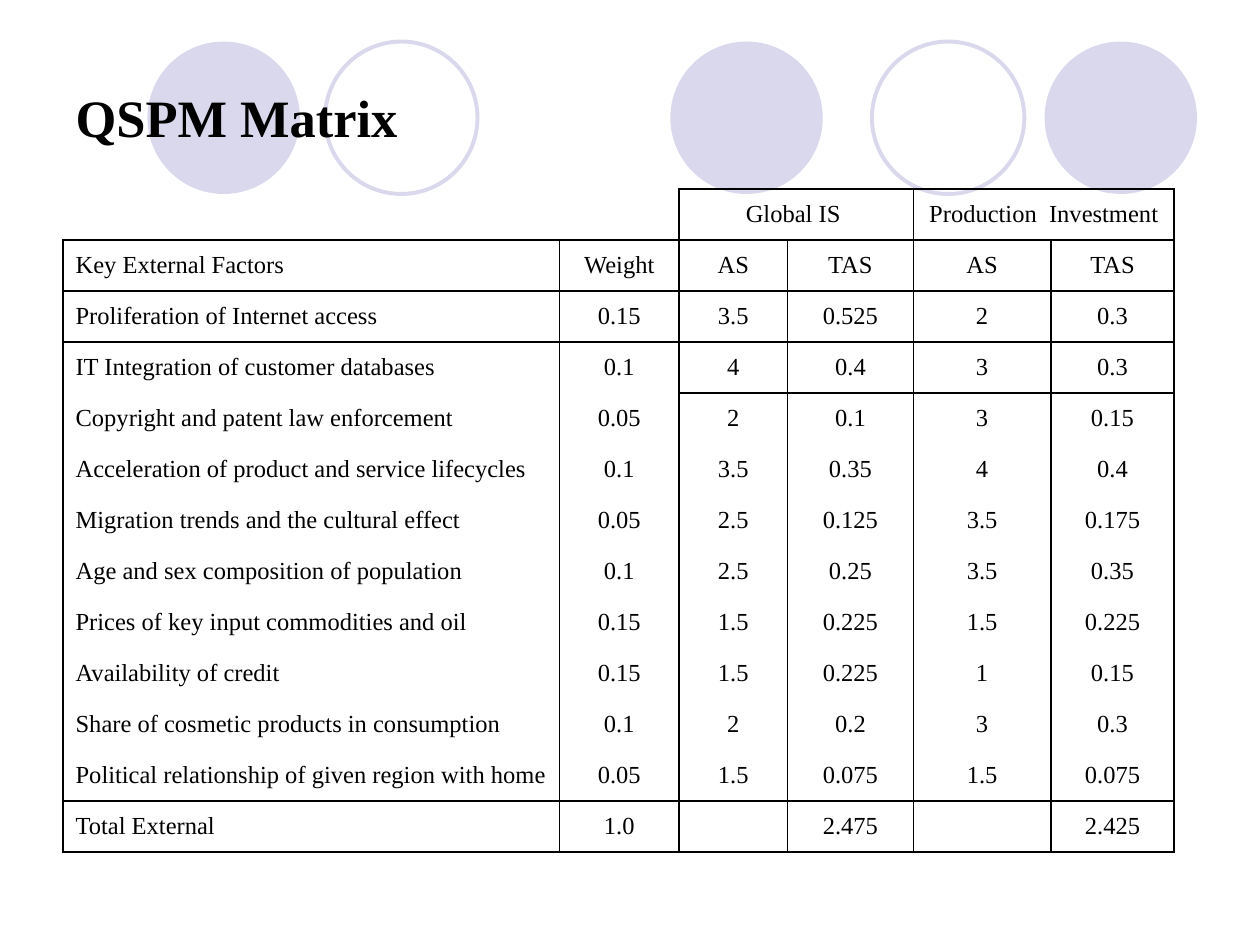
import pptx
import pptx.util
import pptx.dml.color
import pptx.enum.shapes
import pptx.enum.text
import pptx.oxml.ns
import lxml.etree
from dataclasses import dataclass

Pt = pptx.util.Pt
ALIGN = pptx.enum.text.PP_ALIGN
MIDDLE = pptx.enum.text.MSO_ANCHOR.MIDDLE


@dataclass
class Theme:
    font: str = "Times New Roman"
    ink: str = "000000"
    tint: str = "D9D8EC"
    head: float = 30
    body: float = 14
    rule: float = 1
    ring: float = 2.25
    plain: str = "{2D5ABB26-0587-4C30-8999-92F81FD0307C}"


class Page:
    COLS, ROWS = 100, 75

    def __init__(self, deck, theme):
        self.theme = theme
        self.unit_x = deck.slide_width / self.COLS
        self.unit_y = deck.slide_height / self.ROWS
        self.slide = deck.slides.add_slide(deck.slide_layouts[5])

    def box(self, x, y, w, h):
        return (round(x * self.unit_x), round(y * self.unit_y),
                round(w * self.unit_x), round(h * self.unit_y))

    def color(self, code):
        return pptx.dml.color.RGBColor.from_string(code)

    def style(self, frame, size, bold=False, align=ALIGN.LEFT):
        for para in frame.paragraphs:
            para.alignment = align
            for run in para.runs:
                run.font.name = self.theme.font
                run.font.size = Pt(size)
                run.font.bold = bold
                run.font.color.rgb = self.color(self.theme.ink)

    def disc(self, x, y, size, solid):
        kind = pptx.enum.shapes.MSO_SHAPE.OVAL
        disc = self.slide.shapes.add_shape(kind, *self.box(x, y, size, size))
        disc.shadow.inherit = False
        tint = self.color(self.theme.tint)
        if solid:
            disc.fill.solid()
            disc.fill.fore_color.rgb = tint
            disc.line.fill.background()
        else:
            disc.fill.background()
            disc.line.color.rgb = tint
            disc.line.width = Pt(self.theme.ring)

    def title(self, text, x, y, w, h):
        title = self.slide.shapes.title
        title.left, title.top, title.width, title.height = self.box(x, y, w, h)
        title.text_frame.text = text
        title.text_frame.vertical_anchor = MIDDLE
        self.style(title.text_frame, self.theme.head, bold=True)
        self.slide.shapes._spTree.append(title._element)

    def edge(self, cell, sides):
        props = cell._tc.get_or_add_tcPr()
        name = pptx.oxml.ns.qn
        for side in "LRTB":
            if side in sides:
                line = lxml.etree.SubElement(props, name("a:ln" + side),
                                             w=str(int(Pt(self.theme.rule))))
                fill = lxml.etree.SubElement(line, name("a:solidFill"))
                lxml.etree.SubElement(fill, name("a:srgbClr"), val=self.theme.ink)
        cell.fill.background()

    def table(self, data, widths, x, y, high, spans, rule):
        frame = self.slide.shapes.add_table(
            len(data), len(widths), *self.box(x, y, sum(widths), high * len(data)))
        table = frame.table
        table.first_row = table.horz_banding = False
        table._tbl.tblPr.find(pptx.oxml.ns.qn("a:tableStyleId")).text = self.theme.plain
        for col, width in zip(table.columns, widths):
            col.width = round(width * self.unit_x)
        for row in table.rows:
            row.height = round(high * self.unit_y)
        for r, row in enumerate(data):
            for c, text in enumerate(row):
                cell = table.cell(r, c)
                cell.margin_top = cell.margin_bottom = Pt(1.5)
                cell.vertical_anchor = MIDDLE
                self.edge(cell, rule(r, c))
                if text:
                    cell.text_frame.text = text
                    self.style(cell.text_frame, self.theme.body,
                               align=ALIGN.CENTER if c else ALIGN.LEFT)
        for r, c, last in spans:
            table.cell(r, c).merge(table.cell(r, last))


DISCS = [(53.2, True), (82.9, True), (11.7, True), (69.2, False), (25.8, False)]
WIDTHS = [39.4, 9.5, 8.6, 10, 10.9, 9.8]
MATRIX = [
    ["", "", "Global IS ", "", "Production  Investment", ""],
    ["Key External Factors", "Weight", "AS", "TAS", "AS", "TAS"],
    ["Proliferation of Internet access", "0.15", "3.5", "0.525", "2", "0.3"],
    ["IT Integration of customer databases", "0.1", "4", "0.4", "3", "0.3"],
    ["Copyright and patent law enforcement", "0.05", "2", "0.1", "3", "0.15"],
    ["Acceleration of product and service lifecycles", "0.1", "3.5", "0.35", "4", "0.4"],
    ["Migration trends and the cultural effect", "0.05", "2.5", "0.125", "3.5", "0.175"],
    ["Age and sex composition of population", "0.1", "2.5", "0.25", "3.5", "0.35"],
    ["Prices of key input commodities and oil", "0.15", "1.5", "0.225", "1.5", "0.225"],
    ["Availability of credit", "0.15", "1.5", "0.225", "1", "0.15"],
    ["Share of cosmetic products in consumption", "0.1", "2", "0.2", "3", "0.3"],
    ["Political relationship of given region with home", "0.05", "1.5", "0.075", "1.5", "0.075"],
    ["Total External", "1.0", "", "2.475", "", "2.425"],
]


def rule(row, col):
    if row == 0 and col < 2:
        return "B" if col == 0 else "RB"
    if row in (0, 1, len(MATRIX) - 1):
        return "LRTB"
    sides = "LR"
    if row == 2:
        sides += "T" if col < 2 else "TB"
    if row == 3 and col > 1:
        sides += "T"
    if row == len(MATRIX) - 2:
        sides += "B"
    return sides


def main():
    deck = pptx.Presentation()
    deck.slide_width = pptx.util.Inches(10)
    deck.slide_height = pptx.util.Inches(7.5)
    page = Page(deck, Theme())
    for left, solid in DISCS:
        page.disc(left, 3.3, 12.1, solid)
    page.title("QSPM Matrix", 5, 3, 90, 12.5)
    page.table(MATRIX, WIDTHS, 5, 15, 4.05, [(0, 2, 3), (0, 4, 5)], rule)
    deck.save("out.pptx")


if __name__ == "__main__":
    main()
